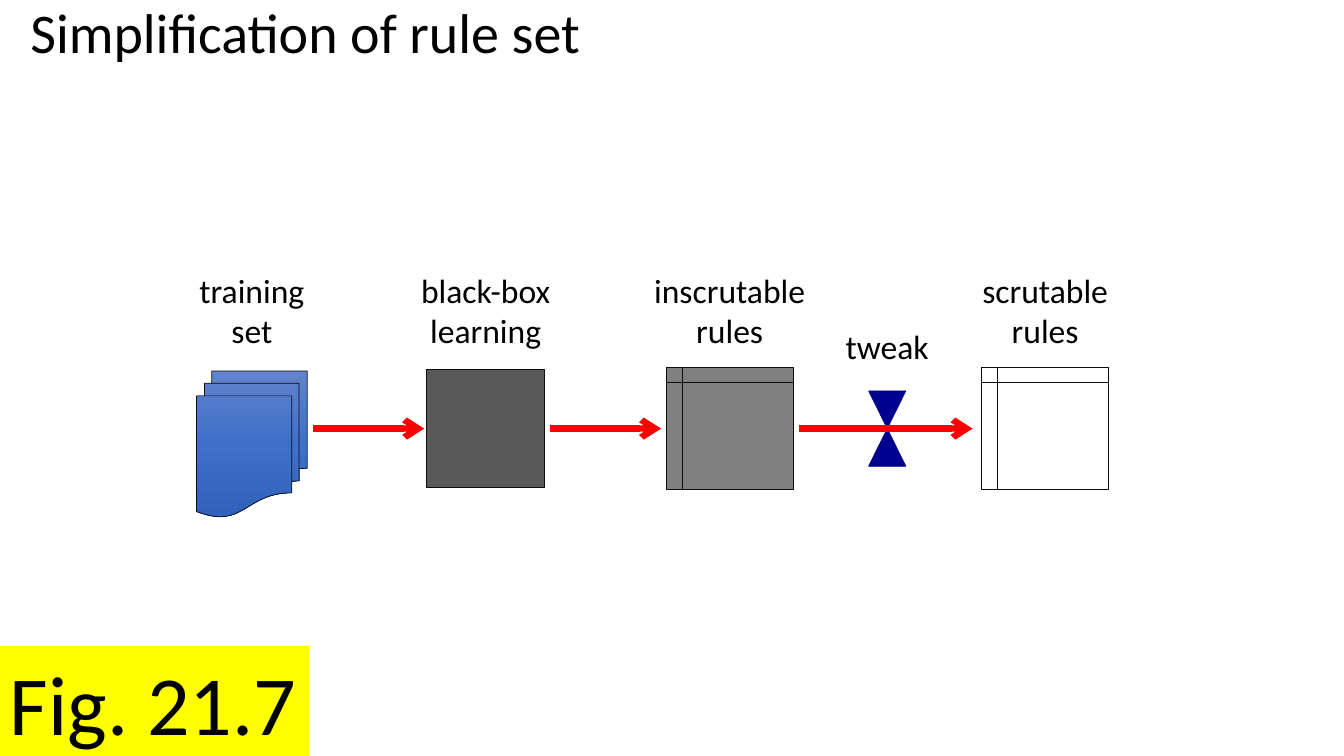
from copy import deepcopy

from pptx import Presentation
from pptx.dml.color import RGBColor
from pptx.enum.shapes import MSO_CONNECTOR, MSO_SHAPE
from pptx.enum.text import MSO_ANCHOR, MSO_AUTO_SIZE, PP_ALIGN
from pptx.oxml.ns import qn
from pptx.util import Cm, Pt

COLORS = {
    "text": "000000",
    "outline": "0D0D0D",
    "black_box": "595959",
    "inscrutable": "808080",
    "scrutable": "FFFFFF",
    "tweak": "000090",
    "arrow": "FF0000",
    "tag": "FFFF00",
}
DOCUMENT_GRADIENT = ["6183CB", "3E70CA", "3062BB"]
AXIS = 10.8
TRAINING, LEARNING, INSCRUTABLE, TWEAK, SCRUTABLE = 6.35, 12.24, 18.39, 22.36, 26.34


def rgb(name):
    """Return the colour that has this name."""
    return RGBColor.from_string(COLORS[name])


def write(text_frame, text, *, size, align=PP_ALIGN.LEFT, anchor=MSO_ANCHOR.TOP,
          wrap=False, spacing=None, font="Calibri", color="text"):
    """Put formatted text, with its line breaks, into a text frame."""
    text_frame.auto_size = MSO_AUTO_SIZE.NONE
    text_frame.word_wrap = wrap
    text_frame.vertical_anchor = anchor
    paragraph = text_frame.paragraphs[0]
    paragraph.text = text
    paragraph.alignment = align
    paragraph.line_spacing = spacing
    for run in paragraph.runs:
        run.font.name = font
        run.font.size = Pt(size)
        run.font.color.rgb = rgb(color)


class Diagram:
    """Hold the slide and the style of its elements."""

    def __init__(self, slide, label_size=24, outline_width=0.5, arrow_width=4.5):
        """Keep the slide and the shared sizes."""
        self.slide = slide
        self.label_size = label_size
        self.outline_width = outline_width
        self.arrow_width = arrow_width

    def title(self, text):
        """Move and fill the title placeholder."""
        title = self.slide.shapes.title
        title.left, title.top = Cm(0.51), Cm(0)
        title.width, title.height = Cm(32.84), Cm(4.52)
        write(title.text_frame, text, size=40, wrap=True, spacing=0.9)

    def label(self, text, center, width, top=6.68, height=2.31):
        """Add a label centred on a stage."""
        box = self.slide.shapes.add_textbox(
            Cm(center - width / 2), Cm(top), Cm(width), Cm(height))
        write(box.text_frame, text, size=self.label_size, align=PP_ALIGN.CENTER)

    def stage(self, kind, center, width, height, fill=None, outline="outline", middle=AXIS):
        """Add a shape centred on a stage."""
        shape = self.slide.shapes.add_shape(
            kind, Cm(center - width / 2), Cm(middle - height / 2), Cm(width), Cm(height))
        shape.shadow.inherit = False
        shape.line.color.rgb = rgb(outline)
        shape.line.width = Pt(self.outline_width)
        if fill:
            shape.fill.solid()
            shape.fill.fore_color.rgb = rgb(fill)
        return shape

    def documents(self, center, width, height, middle):
        """Add the document stack with its three-stop gradient."""
        shape = self.stage(MSO_SHAPE.FLOWCHART_MULTIDOCUMENT, center, width, height,
                           middle=middle)
        shape.fill.gradient()
        shape.fill.gradient_angle = 270
        stop_list = shape._element.spPr.find(qn("a:gradFill")).find(qn("a:gsLst"))
        stop_list.insert(1, deepcopy(stop_list[0]))
        for index, (stop, color) in enumerate(
                zip(shape.fill.gradient_stops, DOCUMENT_GRADIENT)):
            stop.position = index / 2
            stop.color.rgb = RGBColor.from_string(color)

    def arrow(self, start, end):
        """Add an arrow along the axis."""
        connector = self.slide.shapes.add_connector(
            MSO_CONNECTOR.STRAIGHT, Cm(start), Cm(AXIS), Cm(end), Cm(AXIS))
        connector.line.color.rgb = rgb("arrow")
        connector.line.width = Pt(self.arrow_width)
        properties = connector._element.spPr
        line = properties.find(qn("a:ln"))
        line.append(line.makeelement(qn("a:tailEnd"), {"type": "arrow"}))
        properties.append(properties.makeelement(qn("a:effectLst"), {}))

    def tag(self, text):
        """Add the figure number in the lower left corner."""
        shape = self.slide.shapes.add_shape(
            MSO_SHAPE.RECTANGLE, Cm(0), Cm(16.28), Cm(7.8), Cm(2.82))
        shape.shadow.inherit = False
        shape.fill.solid()
        shape.fill.fore_color.rgb = rgb("tag")
        shape.line.fill.background()
        write(shape.text_frame, text, size=60)


def main():
    """Build and save the slide."""
    presentation = Presentation()
    presentation.slide_width, presentation.slide_height = Cm(33.87), Cm(19.05)
    diagram = Diagram(presentation.slides.add_slide(presentation.slide_layouts[5]))

    diagram.title("Simplification of rule set")
    for text, center, width in [
        ("training\nset", TRAINING, 3.2),
        ("black-box\nlearning", LEARNING, 3.86),
        ("inscrutable\nrules", INSCRUTABLE, 4.37),
        ("scrutable\nrules", SCRUTABLE, 3.73),
    ]:
        diagram.label(text, center, width)
    diagram.label("tweak", TWEAK, 2.64, top=8.1, height=1.27)

    diagram.documents(TRAINING, 2.79, 3.68, middle=11.19)
    diagram.stage(MSO_SHAPE.RECTANGLE, LEARNING, 2.97, 2.97, "black_box")
    for center, fill in [(INSCRUTABLE, "inscrutable"), (SCRUTABLE, "scrutable")]:
        diagram.stage(MSO_SHAPE.FLOWCHART_INTERNAL_STORAGE, center, 3.2, 3.07, fill)
    diagram.stage(MSO_SHAPE.FLOWCHART_COLLATE, TWEAK, 0.94, 1.9, "tweak", outline="tweak")
    for start, end in [(7.9, 10.69), (13.87, 16.66), (20.14, 24.51)]:
        diagram.arrow(start, end)
    diagram.tag("Fig. 21.7")
    presentation.save("out.pptx")


if __name__ == "__main__":
    main()
